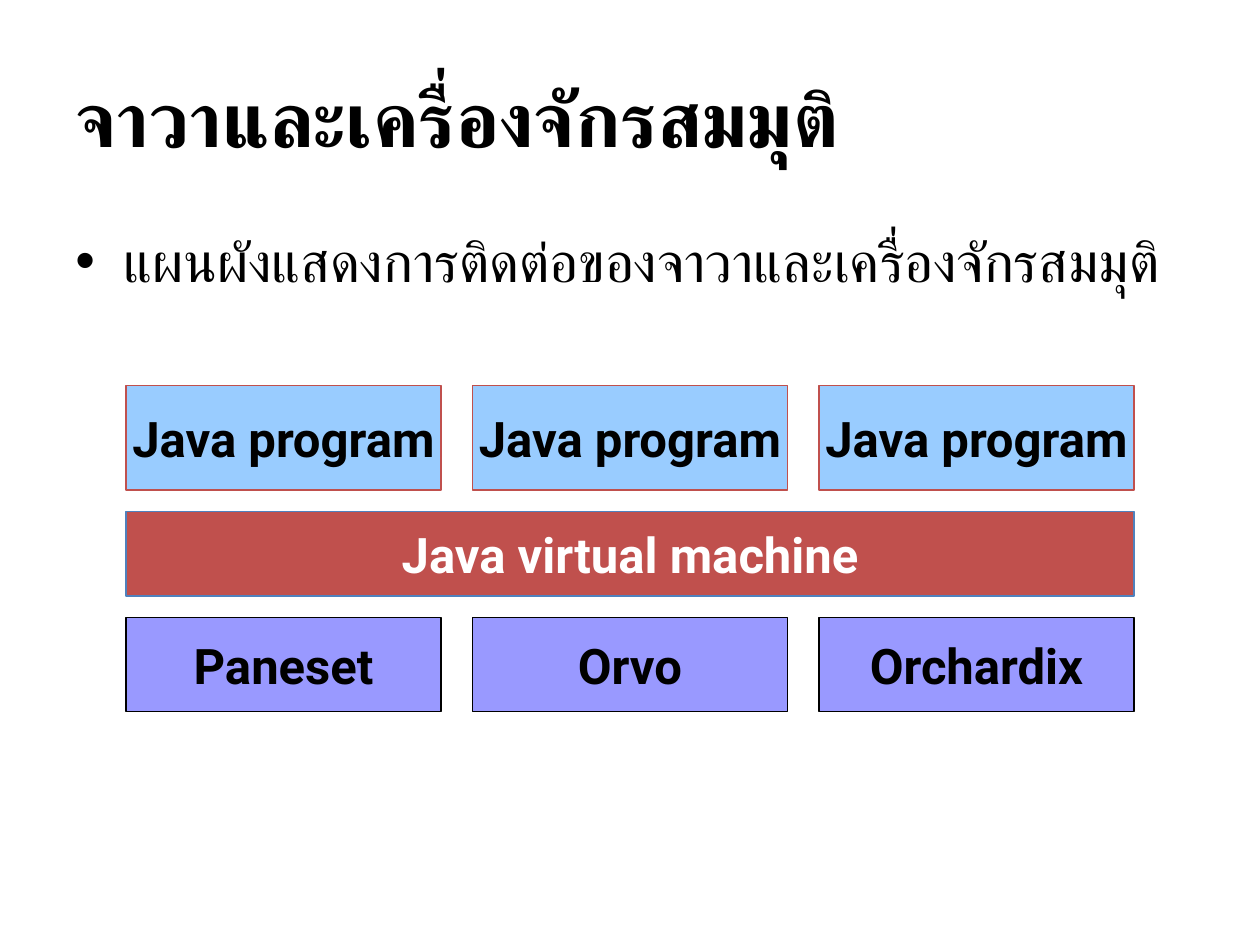
from dataclasses import dataclass

import pptx
import pptx.dml.color
import pptx.enum.shapes
import pptx.enum.text
import pptx.oxml.ns
import pptx.util
from lxml import etree


@dataclass(frozen=True)
class Theme:
    font: str = "Roboto"
    title_size: int = 44
    body_size: int = 32
    label_size: int = 28
    black: str = "000000"
    white: str = "FFFFFF"
    sky: str = "99CCFF"
    red: str = "C0504D"
    blue: str = "4F81BD"
    violet: str = "9999FF"


THEME = Theme()
PAGE_WIDTH, PAGE_HEIGHT = 10, 7.5
MARGIN = 0.5

# Diagram grid: three columns, with a gap between columns and between layers
GRID_LEFT, GRID_TOP = 1, 3.06
COLUMNS = 3
COLUMN_WIDTH, COLUMN_GAP = 2.5, 0.25
LAYER_GAP = 0.17
INDENT = 0.38


def inches(*lengths):
    return [pptx.util.Inches(length) for length in lengths]


def color(code):
    return pptx.dml.color.RGBColor.from_string(code)


def add_child(parent, tag, **attributes):
    return etree.SubElement(parent, pptx.oxml.ns.qn(tag), **attributes)


def write_text(shape, text, size, ink=THEME.black, bold=False, centered=False,
               middle=True, wrap=True, bullet=None):
    frame = shape.text_frame
    frame.word_wrap = wrap
    anchors = pptx.enum.text.MSO_ANCHOR
    frame.vertical_anchor = anchors.MIDDLE if middle else anchors.TOP
    para = frame.paragraphs[0]
    alignments = pptx.enum.text.PP_ALIGN
    para.alignment = alignments.CENTER if centered else alignments.LEFT
    if bullet:
        properties = para._p.get_or_add_pPr()
        indent = pptx.util.Inches(INDENT)
        properties.set("marL", str(indent))
        properties.set("indent", str(-indent))
        add_child(properties, "a:buFont", typeface="Arial")
        add_child(properties, "a:buChar", char=bullet)
    span = para.add_run()
    span.text = text
    span.font.name = THEME.font
    span.font.size = pptx.util.Pt(size)
    span.font.bold = bold
    span.font.color.rgb = color(ink)
    # Thai letters take the complex-script font
    add_child(span.font._element, "a:cs", typeface=THEME.font)


def add_text(page, top, height, text, **style):
    box = page.shapes.add_textbox(
        *inches(MARGIN, top, PAGE_WIDTH - 2 * MARGIN, height))
    write_text(box, text, **style)


def add_block(page, left, top, width, height, label, fill, line, ink):
    block = page.shapes.add_shape(
        pptx.enum.shapes.MSO_SHAPE.RECTANGLE, *inches(left, top, width, height))
    block.shadow.inherit = False
    block.fill.solid()
    block.fill.fore_color.rgb = color(fill)
    block.line.color.rgb = color(line)
    block.line.width = pptx.util.Pt(0.75)
    write_text(block, label, THEME.label_size, ink=ink, bold=True,
               centered=True, wrap=False)


def add_layer(page, top, height, labels, fill, line, ink=THEME.black):
    """Share the grid's columns equally among the labels."""
    columns = COLUMNS // len(labels)
    width = columns * COLUMN_WIDTH + (columns - 1) * COLUMN_GAP
    for index, label in enumerate(labels):
        left = GRID_LEFT + index * (width + COLUMN_GAP)
        add_block(page, left, top, width, height, label, fill, line, ink)


def main():
    deck = pptx.Presentation()
    deck.slide_width, deck.slide_height = inches(PAGE_WIDTH, PAGE_HEIGHT)
    page = deck.slides.add_slide(deck.slide_layouts[6])

    # Heading and introduction
    add_text(page, 0.3, 1.25, "จาวาและเครื่องจักรสมมุติ",
             size=THEME.title_size, bold=True)
    add_text(page, 1.75, 4.95, "แผนผังแสดงการติดต่อของจาวาและเครื่องจักรสมมุติ",
             size=THEME.body_size, middle=False, bullet="•")

    # Programs, virtual machine and operating systems, from top to bottom
    layers = [
        (0.83, ["Java program"] * COLUMNS, THEME.sky, THEME.red, THEME.black),
        (0.67, ["Java virtual machine"], THEME.red, THEME.blue, THEME.white),
        (0.75, ["Paneset", "Orvo", "Orchardix"],
         THEME.violet, THEME.black, THEME.black),
    ]
    top = GRID_TOP
    for height, labels, fill, line, ink in layers:
        add_layer(page, top, height, labels, fill, line, ink)
        top += height + LAYER_GAP

    deck.save("out.pptx")


if __name__ == "__main__":
    main()
